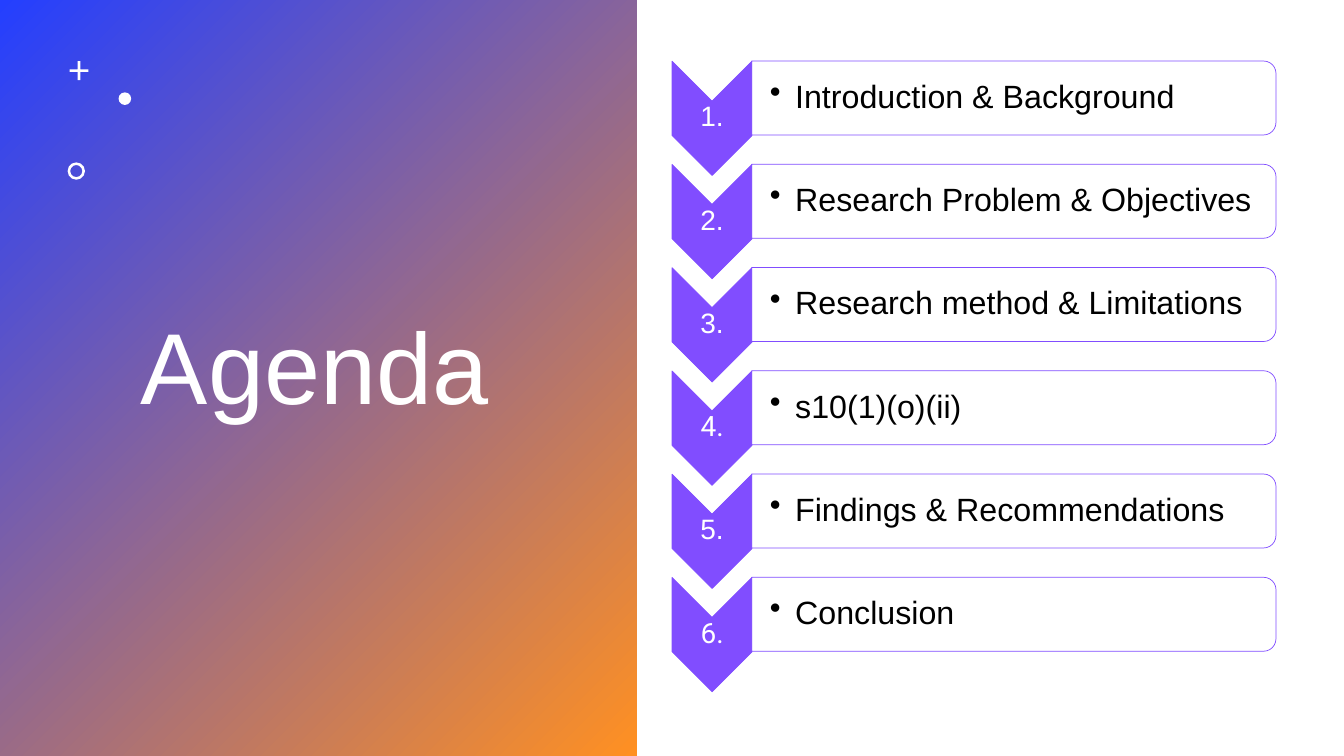
import pptx
import pptx.util
import pptx.dml.color
import pptx.enum.shapes
import pptx.enum.text
import pptx.oxml
import pptx.oxml.ns

Pt = pptx.util.Pt
RGB = pptx.dml.color.RGBColor.from_string
MSO = pptx.enum.shapes.MSO_SHAPE
ALIGN = pptx.enum.text.PP_ALIGN
qn = pptx.oxml.ns.qn

COLORS = {
    "white": "FFFFFF",
    "black": "000000",
    "violet": "814DFF",
    "blue": "243FFF",
    "orange": "FF9022",
}
AGENDA = [
    ("Introduction & Background", "Arial"),
    ("Research Problem & Objectives", "Arial"),
    ("Research method & Limitations", "Arial"),
    ("s10(1)(o)(ii)", "Roboto"),
    ("Findings & Recommendations", "Arial"),
    ("Conclusion", "Roboto"),
]
ROW_PITCH = 73.75

prs = pptx.Presentation()
prs.slide_width, prs.slide_height = Pt(960), Pt(540)
s = prs.slides.add_slide(prs.slide_layouts[6])


def add_shape(kind, x, y, w, h, fill, line=None):
    sp = s.shapes.add_shape(kind, Pt(x), Pt(y), Pt(w), Pt(h))
    sp.shadow.inherit = False
    sp.fill.solid()
    sp.fill.fore_color.rgb = RGB(COLORS[fill])
    if line:
        sp.line.color.rgb = RGB(COLORS[line])
        sp.line.width = Pt(0.5)
    else:
        sp.line.fill.background()
    return sp


def add_text(text, x, y, w, h, size, color, insets, font="Arial", align=ALIGN.LEFT):
    tf = s.shapes.add_textbox(Pt(x), Pt(y), Pt(w), Pt(h)).text_frame
    tf.word_wrap = True
    tf.vertical_anchor = pptx.enum.text.MSO_ANCHOR.MIDDLE
    tf.margin_left = Pt(insets[0])
    tf.margin_top = tf.margin_right = tf.margin_bottom = Pt(insets[1])
    p = tf.paragraphs[0]
    p.text = text
    p.alignment = align
    p.line_spacing = 0.9
    p.font.size = Pt(size)
    p.font.name = font
    p.font.color.rgb = RGB(COLORS[color])
    return p


panel = add_shape(MSO.RECTANGLE, 0, 0, 455, 540, "blue")
panel.fill.gradient()
panel.fill.gradient_angle = 315
for stop, name in zip(panel.fill.gradient_stops, ("blue", "orange")):
    stop.color.rgb = RGB(COLORS[name])

add_text("Agenda", 93.6, 30.2, 315.4, 470.2, 72, "white", (7.2, 3.6))

plus = add_shape(MSO.CROSS, 49.7, 43.7, 13.5, 13.5, "white")
plus.adjustments[0] = 0.43
add_shape(MSO.OVAL, 84.7, 66, 9, 9, "white")
ring = add_shape(MSO.DONUT, 48.3, 116, 12.4, 12.4, "white")
ring.adjustments[0] = 0.15

for i, (topic, number_font) in enumerate(AGENDA):
    dy = i * ROW_PITCH

    chevron = add_shape(MSO.CHEVRON, 467.8, 56 + dy, 81.6, 57.1, "violet", "violet")
    chevron.rotation = 90
    add_text(f"{i + 1}.", 480.2, 72 + dy, 56.9, 24.5, 20, "white", (0.9, 0.9),
             number_font, ALIGN.CENTER)

    bar = add_shape(MSO.ROUND_2_SAME_RECTANGLE, 697.8, -117.2 + dy, 52.8, 374.4,
                    "white", "violet")
    bar.rotation = 90
    rgb = bar.fill._xPr.find(qn("a:solidFill"))[0]
    rgb.append(pptx.oxml.parse_xml(
        '<a:alpha xmlns:a="http://schemas.openxmlformats.org/drawingml/2006/main" val="90000"/>'))

    p = add_text(topic, 537.1, 46.2 + dy, 372.2, 47.5, 23, "black", (12.9, 1.2))
    pPr = p._p.get_or_add_pPr()
    pPr.set("marL", str(Pt(18)))
    pPr.set("indent", str(-Pt(18)))
    bullet = pptx.oxml.parse_xml(
        '<a:buChar xmlns:a="http://schemas.openxmlformats.org/drawingml/2006/main" char="•"/>')
    pPr.find(qn("a:defRPr")).addprevious(bullet)

prs.save("out.pptx")
